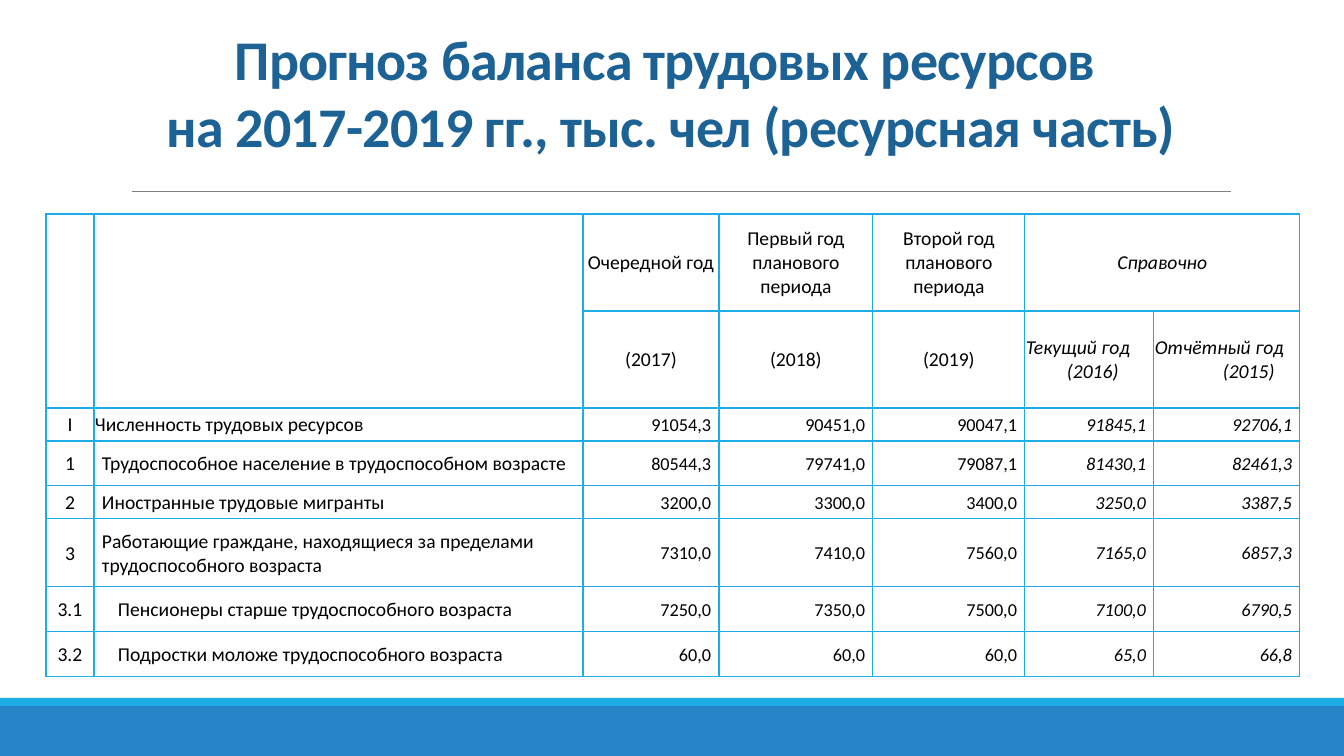
import pptx
import pptx.util
import pptx.dml.color
import pptx.enum.text
import pptx.enum.shapes
import pptx.oxml
from lxml import etree

TITLE = "Прогноз баланса трудовых ресурсов \vна 2017-2019 гг., тыс. чел (ресурсная часть)"
# Heading cells: row, column, lines
HEADS = [
    (0, 2, ["Очередной год"]),
    (0, 3, ["Первый год планового периода"]),
    (0, 4, ["Второй год планового периода"]),
    (0, 5, ["Справочно"]),
    (1, 2, ["(2017)"]),
    (1, 3, ["(2018)"]),
    (1, 4, ["(2019)"]),
    (1, 5, ["Текущий год", "(2016)"]),
    (1, 6, ["Отчётный год", "(2015)"]),
]
# Data rows: number, left inset of the label in px, label, values
DATA = [
    ("I", 1, "Численность трудовых ресурсов",
     ["91054,3", "90451,0", "90047,1", "91845,1", "92706,1"]),
    ("1", 8, "Трудоспособное население в трудоспособном возрасте",
     ["80544,3", "79741,0", "79087,1", "81430,1", "82461,3"]),
    ("2", 8, "Иностранные трудовые мигранты",
     ["3200,0", "3300,0", "3400,0", "3250,0", "3387,5"]),
    ("3", 8, "Работающие граждане, находящиеся за пределами трудоспособного возраста",
     ["7310,0", "7410,0", "7560,0", "7165,0", "6857,3"]),
    ("3.1", 24, "Пенсионеры старше трудоспособного возраста",
     ["7250,0", "7350,0", "7500,0", "7100,0", "6790,5"]),
    ("3.2", 24, "Подростки моложе трудоспособного возраста",
     ["60,0", "60,0", "60,0", "65,0", "66,8"]),
]
COLS = [48, 489, 136, 154, 152, 129, 146]
ROWS = [97, 97, 33, 45, 33, 68, 45, 45]
MERGES = [(0, 0, 1, 0), (0, 1, 1, 1), (0, 5, 0, 6)]
INDENT = {5: 41, 6: 68}  # left indent of the year under a reference heading
REF = 5  # first reference column, set in italics
BARS = [("blue", 706, 50), ("cyan", 698, 8)]
COLOR = {"blue": "2683C6", "cyan": "1CADE4", "grey": "808080",
         "title": "1D6294", "text": "000000"}
FONT = "Calibri"

ALIGN = pptx.enum.text.PP_ALIGN
ANCHOR = pptx.enum.text.MSO_ANCHOR
Pt = pptx.util.Pt
qn = pptx.oxml.ns.qn


def px(n):
    return pptx.util.Emu(round(n * 914400 / 100.8))


def rgb(name):
    return pptx.dml.color.RGBColor.from_string(COLOR[name])


def style(para, size, color, align, bold=False, slant=False):
    para.alignment = align
    font = para.font
    font.name, font.size = FONT, Pt(size)
    font.bold, font.italic = bold, slant
    font.color.rgb = rgb(color)


def frame(cell):
    """Clear the fill and draw all four borders."""
    cell.fill.background()
    props = cell._tc.get_or_add_tcPr()
    for i, side in enumerate(("lnL", "lnR", "lnT", "lnB")):
        line = etree.Element(qn("a:" + side), w=str(Pt(1)))
        fill = etree.SubElement(line, qn("a:solidFill"))
        etree.SubElement(fill, qn("a:srgbClr"), val=COLOR["cyan"])
        props.insert(i, line)


def write(cell, lines, align, size=14, left=1, right=1, slant=False):
    cell.vertical_anchor = ANCHOR.MIDDLE
    cell.margin_left, cell.margin_right = px(left), px(right)
    cell.margin_top, cell.margin_bottom = px(1), 0
    cell.text_frame.text = "\n".join(lines)
    for para in cell.text_frame.paragraphs:
        style(para, size, "text", align, slant=slant)


def add_title(slide):
    title = slide.shapes.title
    title.left, title.top, title.width, title.height = map(px, (66, 67, 1210, 92))
    text = title.text_frame
    text.auto_size = pptx.enum.text.MSO_AUTO_SIZE.NONE
    text.word_wrap = True
    text.vertical_anchor = ANCHOR.BOTTOM
    text.margin_top = text.margin_bottom = 0
    text.text = TITLE
    para = text.paragraphs[0]
    para.line_spacing = 1.0
    style(para, 40, "title", ALIGN.CENTER, bold=True)
    for run in para.runs:
        run._r.get_or_add_rPr().set("spc", "-50")


def add_decor(slide):
    for color, top, high in BARS:
        bar = slide.shapes.add_shape(pptx.enum.shapes.MSO_SHAPE.RECTANGLE,
                                     0, px(top), px(1344), px(high))
        bar.shadow.inherit = False
        bar.fill.solid()
        bar.fill.fore_color.rgb = rgb(color)
        bar.line.fill.background()
    rule = slide.shapes.add_connector(pptx.enum.shapes.MSO_CONNECTOR.STRAIGHT,
                                      px(132), px(191), px(1231), px(191))
    rule.line.color.rgb = rgb("grey")
    rule.line.width = Pt(0.5)
    etree.SubElement(rule._element.spPr, qn("a:effectLst"))


def add_grid(slide):
    grid = slide.shapes.add_table(len(ROWS), len(COLS), px(46), px(214),
                                  px(sum(COLS)), px(sum(ROWS))).table
    grid.first_row = grid.horz_banding = False
    for col, wide in zip(grid.columns, COLS):
        col.width = px(wide)
    for row, high in zip(grid.rows, ROWS):
        row.height = px(high)
    for r1, c1, r2, c2 in MERGES:
        grid.cell(r1, c1).merge(grid.cell(r2, c2))
    for cell in grid.iter_cells():
        frame(cell)

    for r, c, lines in HEADS:
        cell = grid.cell(r, c)
        pair = len(lines) > 1
        write(cell, lines, ALIGN.LEFT if pair else ALIGN.CENTER, slant=c >= REF)
        if pair:
            year = cell.text_frame.paragraphs[1]._p.get_or_add_pPr()
            year.set("marL", str(px(INDENT[c])))
            year.set("indent", "0")

    for r, (num, inset, label, vals) in enumerate(DATA, 2):
        write(grid.cell(r, 0), [num], ALIGN.CENTER)
        write(grid.cell(r, 1), [label], ALIGN.LEFT, left=inset)
        for c, val in enumerate(vals, 2):
            write(grid.cell(r, c), [val], ALIGN.RIGHT, 13, right=8, slant=c >= REF)


def main():
    deck = pptx.Presentation()
    deck.slide_width, deck.slide_height = px(1344), px(756)
    slide = deck.slides.add_slide(deck.slide_layouts[5])
    add_decor(slide)
    add_title(slide)
    add_grid(slide)
    deck.save("out.pptx")


if __name__ == "__main__":
    main()
